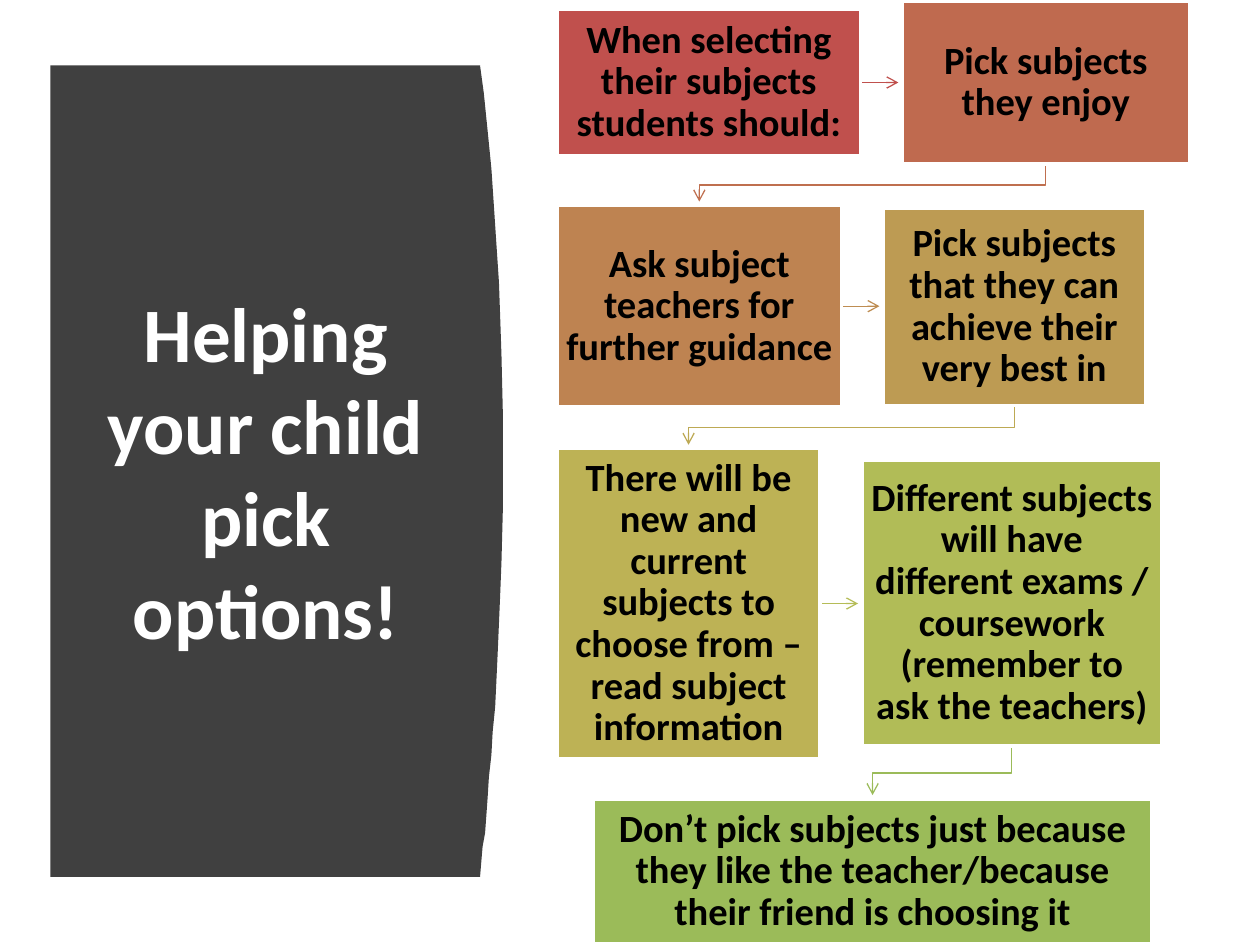
"""Build a slide of linked boxes on helping a child pick school options."""
import itertools

import lxml.etree
import pptx
import pptx.dml.color
import pptx.enum.shapes
import pptx.enum.text
import pptx.oxml.ns
import pptx.util

Inches = pptx.util.Inches
RGBColor = pptx.dml.color.RGBColor
WHITE = RGBColor(0xFF, 0xFF, 0xFF)
BLACK = RGBColor(0x00, 0x00, 0x00)
CHARCOAL = RGBColor(0x40, 0x40, 0x40)
RED = RGBColor(0xC0, 0x50, 0x4D)
RUST = RGBColor(0xBF, 0x6A, 0x4F)
RUST_LINE = RGBColor(0xBF, 0x6F, 0x4F)
ORANGE = RGBColor(0xBE, 0x83, 0x51)
ORANGE_LINE = RGBColor(0xBE, 0x8D, 0x52)
GOLD = RGBColor(0xBD, 0x9B, 0x53)
GOLD_LINE = RGBColor(0xBD, 0xA9, 0x54)
OLIVE = RGBColor(0xBD, 0xB2, 0x55)
OLIVE_LINE = RGBColor(0xB5, 0xBC, 0x57)
LIME = RGBColor(0xB1, 0xBC, 0x57)
GREEN = RGBColor(0x9B, 0xBB, 0x59)

PANEL_EDGE = [
    (3.81, 0.52), (3.84, 0.74), (3.87, 1.04), (3.9, 1.34), (3.92, 1.64),
    (3.94, 1.94), (3.96, 2.24), (3.97, 2.53), (3.98, 2.82), (3.99, 3.25),
    (3.99, 4.07), (3.98, 4.46), (3.97, 4.71), (3.96, 4.95), (3.95, 5.18),
    (3.94, 5.4), (3.93, 5.61), (3.91, 5.81), (3.9, 5.99), (3.88, 6.17),
    (3.87, 6.33), (3.85, 6.61), (3.83, 6.72), (3.81, 6.96),
]
STEPS = [
    ("When selecting their subjects students should:", 4.42, 0.07, 2.41, 1.17, RED, RED),
    ("Pick subjects they enjoy", 7.16, 0.01, 2.28, 1.29, RUST, RUST_LINE),
    ("Ask subject teachers for further guidance", 4.42, 1.63, 2.26, 1.6, ORANGE, ORANGE_LINE),
    ("Pick subjects that they can achieve their very best in",
     7.01, 1.65, 2.08, 1.57, GOLD, GOLD_LINE),
    ("There will be new and current subjects to choose from – read subject information",
     4.42, 3.56, 2.09, 2.46, OLIVE, OLIVE_LINE),
    ("Different subjects will have different exams / coursework (remember to ask the teachers)",
     6.84, 3.65, 2.38, 2.27, LIME, GREEN),
    ("Don’t pick subjects just because they like the teacher/because their friend is choosing it",
     4.71, 6.34, 4.43, 1.15, GREEN, GREEN),
]


def add_outline(points, close):
    inches = [(Inches(x), Inches(y)) for x, y in points]
    builder = slide.shapes.build_freeform(*inches[0])
    builder.add_line_segments(inches[1:], close=close)
    shape = builder.convert_to_shape()
    shape.shadow.inherit = False
    return shape


def write_text(shape, text, size, color, inset, spacing):
    frame = shape.text_frame
    paragraph = frame.paragraphs[0]
    paragraph.text = text
    formats = [
        (frame, {"word_wrap": True, "vertical_anchor": pptx.enum.text.MSO_ANCHOR.MIDDLE,
                 "margin_left": Inches(inset), "margin_right": Inches(inset),
                 "margin_top": Inches(0.07), "margin_bottom": Inches(0.07)}),
        (paragraph, {"alignment": pptx.enum.text.PP_ALIGN.CENTER, "line_spacing": spacing}),
        (paragraph.runs[0].font, {"name": "Calibri", "size": pptx.util.Pt(size), "bold": True}),
    ]
    for target, values in formats:
        for name, value in values.items():
            setattr(target, name, value)
    paragraph.runs[0].font.color.rgb = color


presentation = pptx.Presentation()
presentation.slide_width = Inches(10)
presentation.slide_height = Inches(7.5)
slide = presentation.slides.add_slide(presentation.slide_layouts[6])

panel = add_outline([(0.4, 0.52), *PANEL_EDGE, (0.4, 6.96)], True)
panel.fill.solid()
panel.fill.fore_color.rgb = CHARCOAL
panel.line.fill.background()
title = slide.shapes.add_textbox(Inches(0.71), Inches(1.11), Inches(2.8), Inches(5.24))
write_text(title, "Helping your child pick options!", 44, WHITE, 0.1, 1.0)

for step, following in itertools.zip_longest(STEPS, STEPS[1:]):
    text, left, top, width, height, fill_color, arrow_color = step
    if following:
        next_left, next_top, next_width = following[1:4]
        if next_left > left and next_top < top + height:
            middle = top + height / 2
            arrow = slide.shapes.add_connector(
                pptx.enum.shapes.MSO_CONNECTOR.STRAIGHT, Inches(left + width),
                Inches(middle), Inches(next_left - 0.03), Inches(middle))
            lxml.etree.SubElement(arrow._element.spPr, pptx.oxml.ns.qn("a:effectLst"))
        else:
            start_x, end_x = left + width / 2, next_left + next_width / 2
            start_y, end_y = top + height, next_top - 0.03
            turn_y = (start_y + end_y) / 2 + 0.02
            arrow = add_outline([(start_x, start_y), (start_x, turn_y),
                                 (end_x, turn_y), (end_x, end_y)], False)
            arrow.fill.background()
        arrow.line.color.rgb = arrow_color
        arrow.line.width = pptx.util.Pt(0.75)
        line = arrow.line._get_or_add_ln()
        lxml.etree.SubElement(line, pptx.oxml.ns.qn("a:tailEnd"), type="arrow")

    box = slide.shapes.add_shape(
        pptx.enum.shapes.MSO_SHAPE.RECTANGLE,
        Inches(left), Inches(top), Inches(width), Inches(height))
    box.shadow.inherit = False
    box.fill.solid()
    box.fill.fore_color.rgb = fill_color
    box.line.color.rgb = WHITE
    box.line.width = pptx.util.Pt(2)
    write_text(box, text, 22, BLACK, 0.07, 0.9)

presentation.save("out.pptx")
